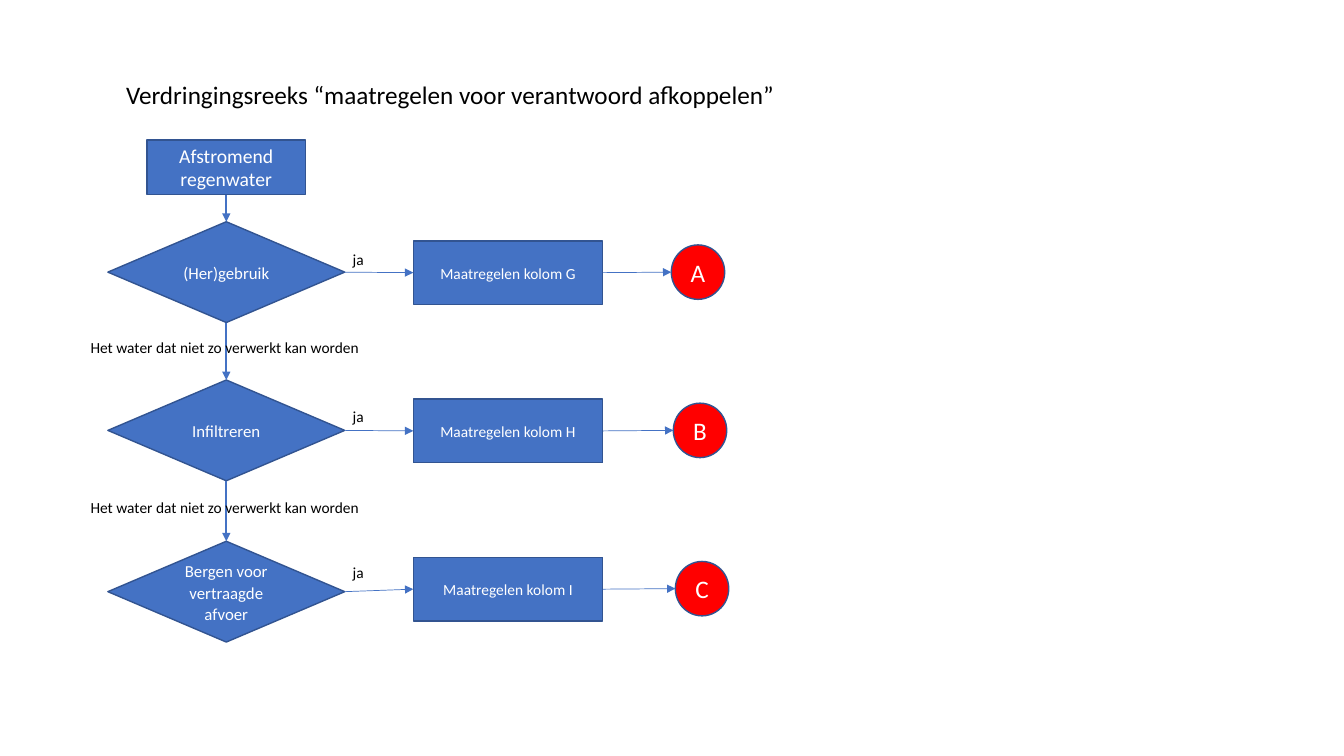
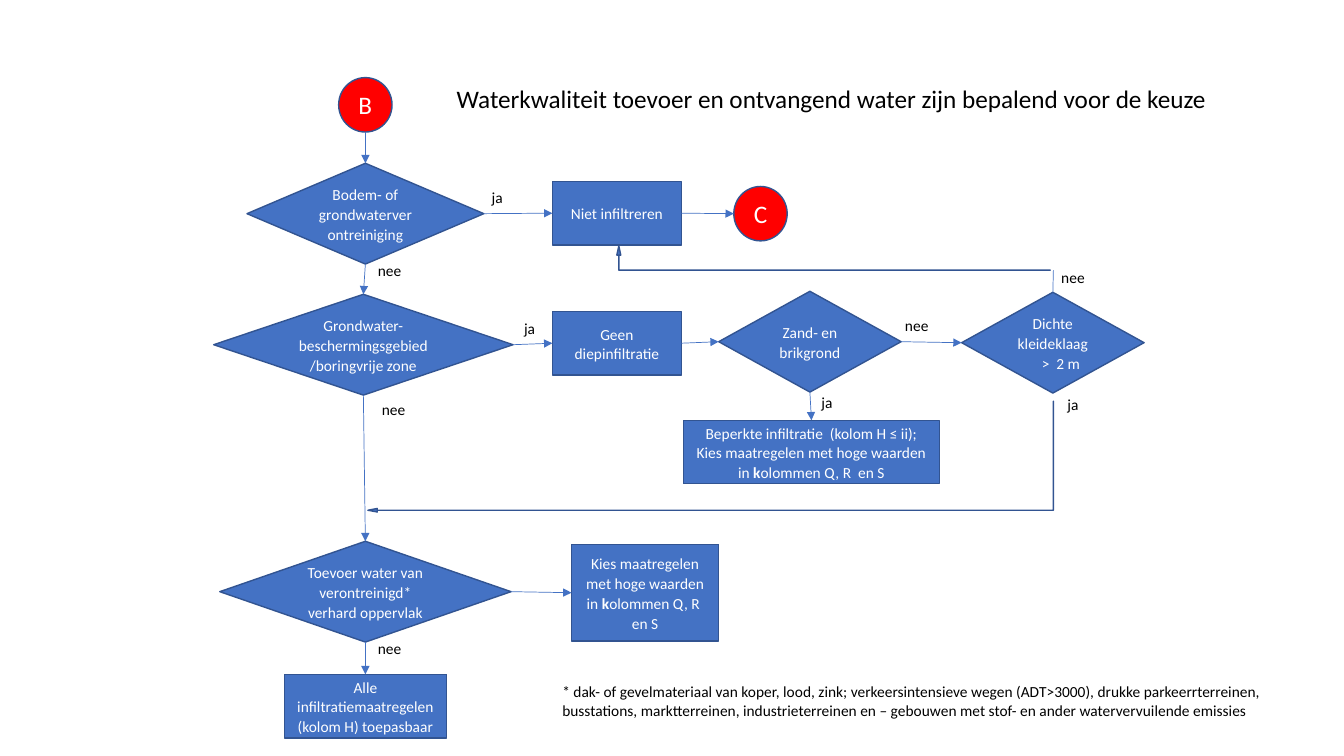
from dataclasses import dataclass
from enum import IntEnum
from typing import Any, Optional, Union

from lxml.etree import SubElement
from pptx import Presentation
from pptx.dml.color import RGBColor
from pptx.enum.shapes import MSO_CONNECTOR, MSO_SHAPE
from pptx.enum.text import MSO_ANCHOR, MSO_AUTO_SIZE, PP_ALIGN
from pptx.oxml.ns import qn
from pptx.util import Inches, Pt

CELL = Inches(0.1)
COLUMNS, ROWS = 133.33, 75
BLUE, EDGE, RED = "4472C4", "325491", "FF0000"
WHITE, BLACK = "FFFFFF", "000000"
FONT = "Calibri"
TITLE_ONLY = 5


class Side(IntEnum):
    TOP = 0
    LEFT = 1
    BOTTOM = 2
    RIGHT = 3


@dataclass(frozen=True)
class Kind:
    preset: MSO_SHAPE
    height: float
    fill: str = BLUE
    size: float = 11
    spacing: float = 1.07


DECISION = Kind(MSO_SHAPE.FLOWCHART_DECISION, 10)
PROCESS = Kind(MSO_SHAPE.FLOWCHART_PROCESS, 6.3)
START = Kind(MSO_SHAPE.RECTANGLE, 5.4, size=14, spacing=1.0)
EXIT = Kind(MSO_SHAPE.OVAL, 5.4, RED, 18, 1.0)
EXIT_W = 5.3


@dataclass(frozen=True)
class Node:
    key: str
    kind: Kind
    text: str
    x: float
    y: float
    w: float
    h: Optional[float] = None
    size: Optional[float] = None
    indent: float = 0

    @property
    def height(self) -> float:
        return self.h or self.kind.height

    def point(self, side: Side) -> tuple[float, float]:
        fx, fy = {Side.TOP: (0.5, 0), Side.LEFT: (0, 0.5),
                  Side.BOTTOM: (0.5, 1), Side.RIGHT: (1, 0.5)}[side]
        return self.x + fx * self.w, self.y + fy * self.height


@dataclass(frozen=True)
class Link:
    src: str
    out: Side
    dst: Union[str, tuple[float, float]]
    into: Side = Side.LEFT
    width: float = 0.5
    head: bool = True


@dataclass(frozen=True)
class Label:
    text: str
    x: float
    y: float
    w: float
    h: float = 2.9
    size: float = 11


@dataclass(frozen=True)
class Bend:
    x: float
    y: float
    w: float
    h: float
    adjust: tuple[float, float, float]
    rotation: float = 0


@dataclass(frozen=True)
class Chart:
    title: Label
    nodes: list[Node]
    links: list[Link]
    labels: list[Label]
    bends: list[Bend]


def cells(*values: float) -> list[int]:
    return [round(v * CELL) for v in values]


def apply(obj: Any, fmt: dict[str, Any]) -> None:
    for name, value in fmt.items():
        setattr(obj, name, value)


def paint(fill: Any, color: str) -> None:
    fill.solid()
    fill.fore_color.rgb = RGBColor.from_string(color)


def write(tf: Any, text: str, size: float, color: str,
          frame: dict[str, Any], para: dict[str, Any]) -> None:
    apply(tf, {"auto_size": MSO_AUTO_SIZE.NONE, **frame})
    for i, line in enumerate(text.split("\n")):
        p = tf.add_paragraph() if i else tf.paragraphs[0]
        apply(p, para)
        for j, part in enumerate(line.split("|")):
            r = p.add_run()
            r.text = part
            apply(r.font, {"name": FONT, "size": Pt(size), "bold": j % 2 == 1})
            paint(r.font.fill, color)


def outline(sp: Any) -> None:
    sp.shadow.inherit = False
    paint(sp.line.fill, EDGE)
    sp.line.width = Pt(1)


def draw_title(s: Any, title: Label) -> None:
    sp = s.shapes.title
    sp.left, sp.top, sp.width, sp.height = cells(title.x, title.y, title.w, title.h)
    write(sp.text_frame, title.text, title.size, BLACK,
          {"word_wrap": False, "vertical_anchor": MSO_ANCHOR.TOP},
          {"alignment": PP_ALIGN.LEFT})


def draw_node(s: Any, node: Node) -> Any:
    kind = node.kind
    sp = s.shapes.add_shape(kind.preset, *cells(node.x, node.y, node.w, node.height))
    outline(sp)
    paint(sp.fill, kind.fill)
    write(sp.text_frame, node.text, node.size or kind.size, WHITE,
          {"word_wrap": True, "vertical_anchor": MSO_ANCHOR.MIDDLE},
          {"alignment": PP_ALIGN.CENTER, "line_spacing": kind.spacing})
    if node.indent:
        pPr = sp.text_frame.paragraphs[-1]._p.get_or_add_pPr()
        pPr.set("marL", str(cells(node.indent)[0]))
    return sp


def draw_link(s: Any, link: Link, nodes: dict[str, Node], drawn: dict[str, Any]) -> None:
    src = nodes[link.src]
    dst = nodes[link.dst] if isinstance(link.dst, str) else None
    end = dst.point(link.into) if dst else link.dst
    cx = s.shapes.add_connector(MSO_CONNECTOR.STRAIGHT,
                                *cells(*src.point(link.out), *end))
    if src.kind is not EXIT:
        cx.begin_connect(drawn[src.key], int(link.out))
    if dst and dst.kind is not EXIT:
        cx.end_connect(drawn[dst.key], int(link.into))
    paint(cx.line.fill, BLUE)
    cx.line.width = Pt(link.width)
    if link.head:
        SubElement(cx.line._get_or_add_ln(), qn("a:tailEnd"), type="triangle")
    SubElement(cx._element.spPr, qn("a:effectLst"))


def draw_label(s: Any, label: Label) -> None:
    sp = s.shapes.add_textbox(*cells(label.x, label.y, label.w, label.h))
    write(sp.text_frame, label.text, label.size, BLACK, {"word_wrap": False}, {})


def draw_bend(s: Any, bend: Bend) -> None:
    sp = s.shapes.add_shape(MSO_SHAPE.BENT_UP_ARROW,
                            *cells(bend.x, bend.y, bend.w, bend.h))
    outline(sp)
    paint(sp.fill, BLUE)
    for i, value in enumerate(bend.adjust):
        sp.adjustments[i] = value
    sp.rotation = bend.rotation
    sp._element.spPr.get_or_add_xfrm().set("flipH", "1")


def draw_chart(prs: Any, chart: Chart) -> None:
    s = prs.slides.add_slide(prs.slide_layouts[TITLE_ONLY])
    draw_title(s, chart.title)
    nodes = {node.key: node for node in chart.nodes}
    drawn = {key: draw_node(s, node) for key, node in nodes.items()}
    for link in chart.links:
        draw_link(s, link, nodes, drawn)
    for bend in chart.bends:
        draw_bend(s, bend)
    for label in chart.labels:
        draw_label(s, label)


def measures_chart() -> Chart:
    nodes = [Node("start", START, "Afstromend regenwater", 14.6, 13.9, 15.7)]
    links, labels = [], []
    above, pitch = "start", 15.7
    steps = [("(Her)gebruik", "G", "A", 22), ("Infiltreren", "H", "B", 37.7),
             ("Bergen voor vertraagde afvoer", "I", "C", 53.7)]
    for i, (text, column, letter, top) in enumerate(steps):
        nodes += [
            Node(text, DECISION, text, 10.7, top, 23.5, size=12),
            Node(column, PROCESS, f"Maatregelen kolom {column}",
                 41, 23.9 + pitch * i, 18.8),
            Node(letter, EXIT, letter, 66.6 + 0.2 * i, 24.3 + pitch * i, EXIT_W),
        ]
        links += [Link(above, Side.BOTTOM, text, Side.TOP, 1.25),
                  Link(text, Side.RIGHT, column),
                  Link(column, Side.RIGHT, letter)]
        labels.append(Label("ja", 34, 24.3 + 15.55 * i, 3.1))
        if i:
            labels.append(Label("Het water dat niet zo verwerkt kan worden",
                                8, 17.3 + 15.8 * i, 29.7))
        above = text
    title = Label("Verdringingsreeks “maatregelen voor verantwoord afkoppelen”",
                  11.5, 7.4, 67, 4, 18)
    return Chart(title, nodes, links, labels, [])


def quality_chart() -> Chart:
    high = "Kies maatregelen met hoge waarden in |k|olommen Q, R  en S"
    nodes = [
        Node("B", EXIT, "B", 33.6, 7.7, EXIT_W),
        Node("soil", DECISION, "Bodem- of grondwaterverontreiniging", 24.5, 16.2, 23.5),
        Node("none", PROCESS, "Niet infiltreren", 54.8, 18, 12.8),
        Node("C", EXIT, "C", 72.8, 18.5, EXIT_W),
        Node("zone", DECISION, "Grondwater-beschermingsgebied/boringvrije zone",
             21.2, 29.2, 29.7),
        Node("shallow", PROCESS, "Geen diepinfiltratie", 54.8, 30.9, 12.8),
        Node("sand", DECISION, "Zand- en brikgrond", 71.3, 28.9, 18.1),
        Node("clay", DECISION, "Dichte kleideklaag\n>  2 m", 95.4, 29, 18.1, indent=1.6),
        Node("limited", PROCESS, f"Beperkte infiltratie  (kolom H ≤ ii); {high}",
             67.8, 41.7, 25.4),
        Node("inflow", DECISION, "Toevoer water van verontreinigd* verhard oppervlak",
             21.8, 53.7, 28.9),
        Node("high", PROCESS, high, 56.7, 54, 14.6, 9.6),
        Node("all", PROCESS, "Alle infiltratiemaatregelen (kolom H) toepasbaar",
             28.2, 66.9, 16.1),
    ]
    down = [("B", "soil"), ("soil", "zone"), ("zone", "inflow"),
            ("inflow", "all"), ("sand", "limited")]
    across = [("soil", "none"), ("none", "C"), ("zone", "shallow"),
              ("shallow", "sand"), ("sand", "clay"), ("inflow", "high")]
    links = [Link(a, Side.BOTTOM, b, Side.TOP) for a, b in down]
    links += [Link(a, Side.RIGHT, b) for a, b in across]
    links.append(Link("clay", Side.TOP, (104.5, 26.8), head=False))
    yes = [(47.8, 18.2), (51, 31.2), (104.9, 38.7), (80.5, 38.5)]
    no = [(104.3, 26.1), (88.8, 30.9), (36.9, 39.2), (36.5, 25.4), (36.5, 62.9)]
    labels = [Label("ja", x, y, 3.1) for x, y in yes]
    labels += [Label("nee", x, y, 4.4) for x, y in no]
    labels.append(Label(
        "* dak- of gevelmateriaal van koper, lood, zink; verkeersintensieve wegen "
        "(ADT>3000), drukke parkeerrterreinen,\n"
        "busstations, marktterreinen, industrieterreinen en – gebouwen met stof- en "
        "ander watervervuilende emissies", 54.8, 67.2, 73.6, 4.7))
    bends = [Bend(61.2, 24.4, 43, 2.4, (0, 0.081, 0.378)),
             Bend(65, 11.3, 11, 68, (0, 0.016, 0.085), 270)]
    title = Label("Waterkwaliteit toevoer en ontvangend water zijn bepalend voor de keuze",
                  44.3, 7.8, 78.6, 4, 18)
    return Chart(title, nodes, links, labels, bends)


def main() -> None:
    prs = Presentation()
    prs.slide_width, prs.slide_height = cells(COLUMNS, ROWS)
    for chart in (measures_chart(), quality_chart()):
        draw_chart(prs, chart)
    prs.save("out.pptx")


if __name__ == "__main__":
    main()
